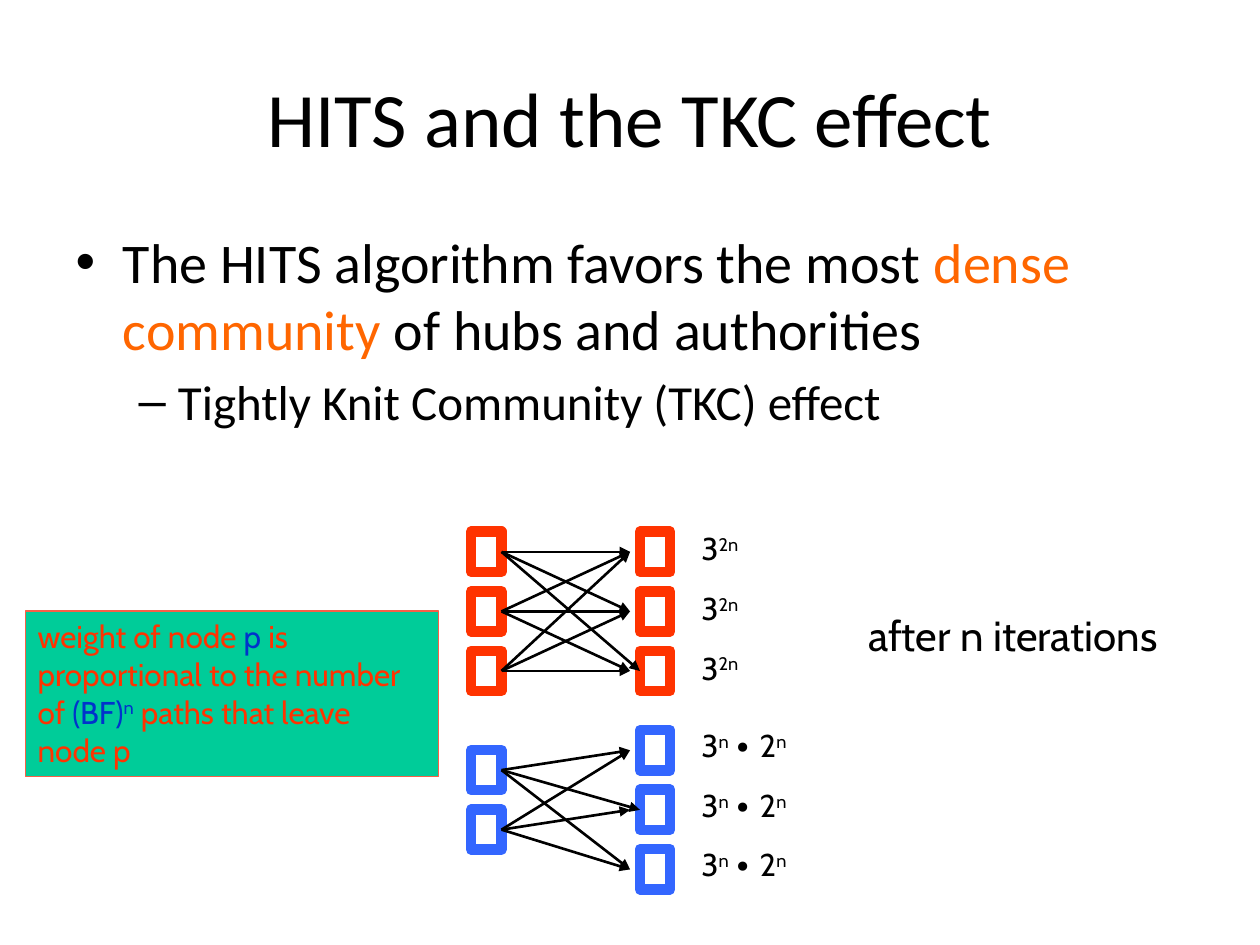
from dataclasses import dataclass

from pptx import Presentation
from pptx.dml.color import RGBColor
from pptx.enum.shapes import MSO_CONNECTOR, MSO_SHAPE
from pptx.enum.text import MSO_ANCHOR, PP_ALIGN
from pptx.oxml.ns import qn
from pptx.util import Cm, Pt
from lxml.etree import SubElement


@dataclass(frozen=True)
class Theme:
    heading_font: str = "Calibri"
    label_font: str = "Cabin"
    black: str = "000000"
    white: str = "FFFFFF"
    orange: str = "FF6600"
    red: str = "FF3300"
    blue: str = "3366FF"
    dark_blue: str = "0033CC"
    green: str = "00CC99"
    note_border: str = "F76047"
    title_size: int = 44
    body_size: int = 32
    sub_size: int = 28
    caption_size: int = 24
    label_size: int = 18


class SlideBuilder:
    """Holds the theme and the current slide; lengths are centimetres."""

    def __init__(self, slide, theme):
        self.slide = slide
        self.theme = theme

    def place(self, shape, left, top, width, height):
        shape.left, shape.top = Cm(left), Cm(top)
        shape.width, shape.height = Cm(width), Cm(height)

    def add_runs(self, paragraph, parts, font, size):
        """Each part is (text, colour) or (text, colour, is_superscript)."""
        for text, color, *raised in parts:
            run = paragraph.add_run()
            run.text = text
            run.font.name = font
            run.font.size = Pt(size)
            run.font.color.rgb = RGBColor.from_string(color)
            if any(raised):
                run.font._element.set("baseline", "30000")

    def title(self, text, *box):
        shape = self.slide.shapes.title
        self.place(shape, *box)
        shape.text_frame.vertical_anchor = MSO_ANCHOR.MIDDLE
        paragraph = shape.text_frame.paragraphs[0]
        paragraph.alignment = PP_ALIGN.CENTER
        self.add_runs(paragraph, [(text, self.theme.black)],
                      self.theme.heading_font, self.theme.title_size)

    def bullets(self, items, *box):
        shape = self.slide.placeholders[1]
        self.place(shape, *box)
        frame = shape.text_frame
        sizes = (self.theme.body_size, self.theme.sub_size)
        for index, (level, parts) in enumerate(items):
            paragraph = frame.add_paragraph() if index else frame.paragraphs[0]
            paragraph.level = level
            self.add_runs(paragraph, parts, self.theme.heading_font, sizes[level])

    def rectangle(self, box, fill, line, weight):
        shape = self.slide.shapes.add_shape(MSO_SHAPE.RECTANGLE, *map(Cm, box))
        shape.shadow.inherit = False
        shape.fill.solid()
        shape.fill.fore_color.rgb = RGBColor.from_string(fill)
        shape.line.color.rgb = RGBColor.from_string(line)
        shape.line.width = Pt(weight)
        return shape

    def arrow(self, start, end):
        connector = self.slide.shapes.add_connector(
            MSO_CONNECTOR.STRAIGHT, *map(Cm, start + end))
        connector.line.color.rgb = RGBColor.from_string(self.theme.black)
        connector.line.width = Pt(1.5)
        SubElement(connector.line._get_or_add_ln(), qn("a:tailEnd"), type="triangle")
        SubElement(connector._element.spPr, qn("a:effectLst"))

    def label(self, parts, size, *box):
        shape = self.slide.shapes.add_textbox(*map(Cm, box))
        shape.text_frame.word_wrap = False
        self.add_runs(shape.text_frame.paragraphs[0], parts, self.theme.label_font, size)

    def note(self, lines, *box):
        shape = self.rectangle(box, self.theme.green, self.theme.note_border, 0.75)
        frame = shape.text_frame
        frame.word_wrap = False
        frame.vertical_anchor = MSO_ANCHOR.TOP
        for index, parts in enumerate(lines):
            paragraph = frame.add_paragraph() if index else frame.paragraphs[0]
            paragraph.alignment = PP_ALIGN.LEFT
            self.add_runs(paragraph, parts, self.theme.label_font, self.theme.label_size)

    def community(self, color, hub_tops, authority_tops, long_arrow):
        """Hubs on the left, each linked to every authority on the right."""
        hub_left, authority_left, width, height = 9.5, 12.9, 0.61, 0.81
        for left, tops in ((hub_left, hub_tops), (authority_left, authority_tops)):
            for top in tops:
                self.rectangle((left, top, width, height), self.theme.white, color, 6)
        for hub, hub_top in enumerate(hub_tops):
            for authority, authority_top in enumerate(authority_tops):
                gap = 0 if (hub, authority) == long_arrow else 0.2
                self.arrow((hub_left + width, hub_top + height / 2),
                           (authority_left - gap, authority_top + height / 2))


def column(top, count, pitch=1.2):
    return [top + pitch * index for index in range(count)]


def main():
    presentation = Presentation()
    presentation.slide_width, presentation.slide_height = Cm(25.4), Cm(19.05)
    slide = presentation.slides.add_slide(presentation.slide_layouts[1])
    theme = Theme()
    builder = SlideBuilder(slide, theme)
    black, red, dark_blue = theme.black, theme.red, theme.dark_blue

    # Title and statement
    builder.title("HITS and the TKC effect", 1.27, 0.76, 22.86, 3.18)
    builder.bullets([
        (0, [("The HITS algorithm favors the most ", black),
             ("dense community", theme.orange),
             (" of hubs and authorities", black)]),
        (1, [("Tightly Knit Community (TKC) effect", black)]),
    ], 1.27, 4.45, 22.86, 12.57)

    # Dense and sparse communities
    builder.community(red, column(10.72, 3), column(10.72, 3), (0, 2))
    builder.community(theme.blue, column(15.12, 2), column(14.72, 3), (0, 1))

    # Authority weights
    dense_weight = [("3", black), ("2n", black, True)]
    sparse_weight = [("3", black), ("n ", black, True),
                     ("∙ 2", black), ("n", black, True)]
    for weight, first_top, width in ((dense_weight, 10.55, 1.32),
                                     (sparse_weight, 14.52, 2.29)):
        for top in column(first_top, 3):
            builder.label(weight, theme.label_size, 13.89, top, width, 1.02)
    builder.label([("after n iterations", black)], theme.caption_size,
                  17.25, 12.17, 6.71, 1.27)

    # Explanation of the weights
    builder.note([
        [("weight of node ", red), ("p", dark_blue), (" is", red)],
        [("proportional to the number", red)],
        [("of ", red), ("(BF)", dark_blue), ("n", dark_blue, True),
         (" paths that leave", red)],
        [("node p", red)],
    ], 0.51, 12.32, 8.33, 3.33)

    presentation.save("out.pptx")


if __name__ == "__main__":
    main()
